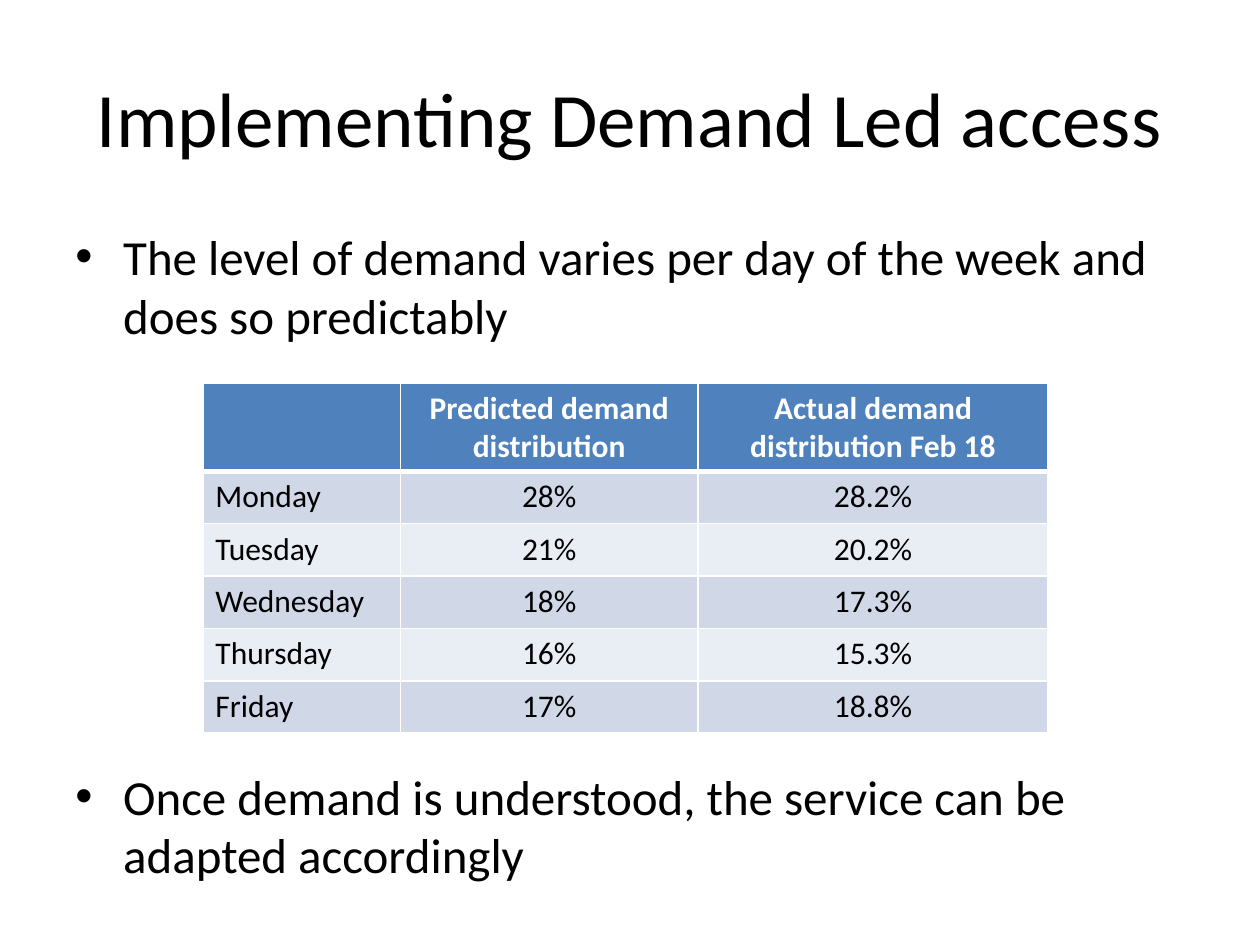
from dataclasses import dataclass
from lxml.etree import SubElement as Sub
from pptx import Presentation
from pptx.dml.color import RGBColor as Rgb
from pptx.enum.text import MSO_ANCHOR as Anchor, PP_ALIGN as Align
from pptx.oxml.ns import qn
from pptx.util import Inches, Pt


@dataclass(frozen=True)
class Theme:
    font: str = "Calibri"
    ink: str = "000000"
    white: str = "FFFFFF"
    head: str = "4F81BD"
    bands: tuple = ("D0D8E8", "E9EDF4")
    title: int = 44
    body: int = 28
    cell: int = 18


def write(para, text, *, font, size, color, bold=False, align=Align.LEFT, before=0):
    para.alignment = align
    para.space_before = Pt(before)
    run = para.add_run()
    run.text = text
    run.font.name = font
    run.font.size = Pt(size)
    run.font.bold = bold
    run.font.color.rgb = Rgb.from_string(color)


class Deck:
    """Draws styled elements on a slide with a grid of 20 columns and 15 rows."""

    def __init__(self, theme):
        self.theme = theme
        self.show = Presentation()
        self.show.slide_width, self.show.slide_height = Inches(10), Inches(7.5)
        self.slide = self.show.slides.add_slide(self.show.slide_layouts[6])

    def unit(self, count):
        return int(count * self.show.slide_width / 20)

    def frame(self, box, anchor=Anchor.TOP):
        shape = self.slide.shapes.add_textbox(*map(self.unit, box))
        frame = shape.text_frame
        frame.word_wrap = True
        frame.vertical_anchor = anchor
        return frame

    def title(self, text, box):
        para = self.frame(box, Anchor.MIDDLE).paragraphs[0]
        write(para, text, font=self.theme.font, size=self.theme.title,
              color=self.theme.ink, align=Align.CENTER)

    def points(self, texts, box, gap):
        frame = self.frame(box)
        for i, text in enumerate(texts):
            para = frame.add_paragraph() if i else frame.paragraphs[0]
            write(para, text, font=self.theme.font, size=self.theme.body,
                  color=self.theme.ink, before=gap if i else 0)
            props = para._p.get_or_add_pPr()
            props.set("marL", str(Inches(0.38)))
            props.set("indent", str(-Inches(0.38)))
            Sub(props, qn("a:buFont"), typeface="Arial")
            Sub(props, qn("a:buChar"), char="•")

    def border(self, cell, low):
        props = cell._tc.get_or_add_tcPr()
        for side in "LRTB":
            width = low if side == "B" else 1
            line = Sub(props, qn(f"a:ln{side}"), w=str(Pt(width)))
            fill = Sub(line, qn("a:solidFill"))
            Sub(fill, qn("a:srgbClr"), val=self.theme.white)

    def table(self, data, box, cols, head):
        theme = self.theme
        size = len(data), len(cols)
        table = self.slide.shapes.add_table(*size, *map(self.unit, box)).table
        for col, width in zip(table.columns, cols):
            col.width = self.unit(width)
        rest = (box[3] - head) / (len(data) - 1)
        for r, row in enumerate(data):
            table.rows[r].height = self.unit(rest if r else head)
            for c, text in enumerate(row):
                cell = table.cell(r, c)
                self.border(cell, 1 if r else 3)
                cell.fill.solid()
                tint = theme.bands[(r - 1) % 2] if r else theme.head
                cell.fill.fore_color.rgb = Rgb.from_string(tint)
                if text:
                    write(cell.text_frame.paragraphs[0], text, font=theme.font,
                          size=theme.cell, color=theme.ink if r else theme.white,
                          bold=r == 0, align=Align.CENTER if c else Align.LEFT)


def main():
    deck = Deck(Theme())
    deck.title("Implementing Demand Led access", (1, 0.6, 18, 2.5))
    deck.points([
        "The level of demand varies per day of the week and does so predictably",
        "Once demand is understood, the service can be adapted accordingly",
    ], (1, 3.5, 18, 10.92), gap=241)
    deck.table([
        ("", "Predicted demand distribution", "Actual demand distribution Feb 18"),
        ("Monday", "28%", "28.2%"),
        ("Tuesday", "21%", "20.2%"),
        ("Wednesday", "18%", "17.3%"),
        ("Thursday", "16%", "15.3%"),
        ("Friday", "17%", "18.8%"),
    ], (3.22, 6.08, 13.42, 5.56), cols=(3.14, 4.72, 5.56), head=1.4)
    deck.show.save("out.pptx")


if __name__ == "__main__":
    main()
